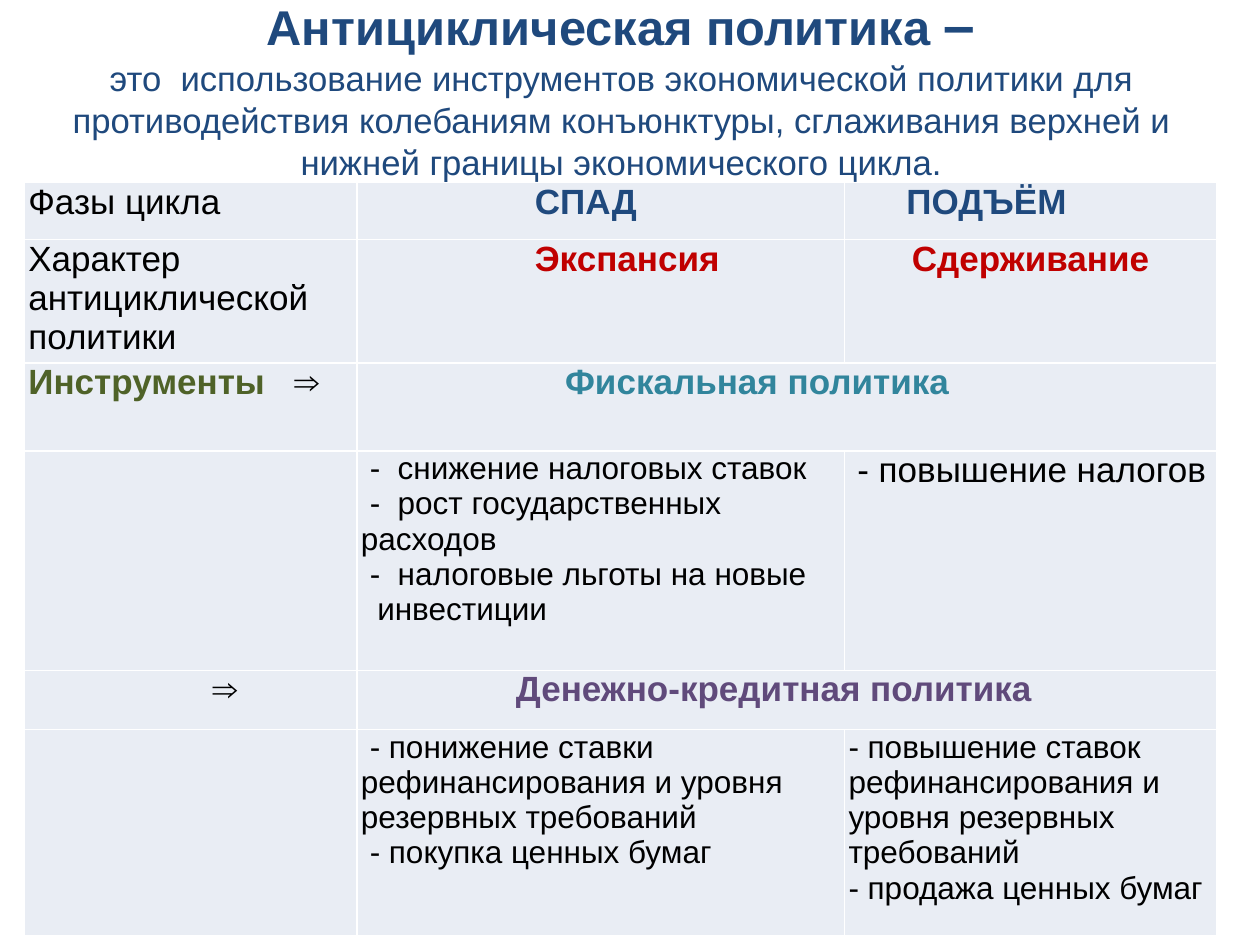
"""Build a slide on counter-cyclical economic policy."""
from dataclasses import dataclass

from lxml.etree import SubElement
from pptx import Presentation
from pptx.dml.color import RGBColor
from pptx.enum.text import MSO_ANCHOR, MSO_AUTO_SIZE, PP_ALIGN
from pptx.oxml.ns import qn
from pptx.util import Inches, Pt


@dataclass(frozen=True)
class Theme:
    """Hold the colours and type sizes of the slide."""
    font: str = "Arial"
    ink: str = "000000"
    navy: str = "1F497D"
    red: str = "C00000"
    olive: str = "4F6228"
    teal: str = "31859C"
    violet: str = "604A7B"
    panel: str = "E9EDF4"
    rule: str = "FFFFFF"
    heading: float = 27.9
    dash: float = 32.4
    definition: float = 19.8
    label: float = 20
    detail: float = 18


@dataclass(frozen=True)
class Line:
    """Describe one paragraph with its runs and its indents in grid units."""
    runs: tuple
    margin: float = 0
    first: float = 0
    centred: bool = False
    space_tracking: float = 0


class PolicySlide:
    """Draw titles and tables on a grid of 100 columns by 75 rows."""

    def __init__(self, deck, theme):
        """Add a title-only slide to the deck."""
        self.theme = theme
        self.slide = deck.slides.add_slide(deck.slide_layouts[5])
        self.unit = deck.slide_width / 100

    def length(self, units):
        """Turn grid units into a slide length."""
        return round(units * self.unit)

    def format_run(self, run, size, colour, bold):
        """Apply the type style to a run."""
        values = {"name": self.theme.font, "size": Pt(size), "bold": bold}
        for attribute, value in values.items():
            setattr(run.font, attribute, value)
        run.font.color.rgb = RGBColor.from_string(colour)

    def title(self, box, term, dash, definition):
        """Place the term, its dash and its definition in the title."""
        holder = self.slide.shapes.title
        for attribute, units in zip(("left", "top", "width", "height"), box):
            setattr(holder, attribute, self.length(units))
        frame = holder.text_frame
        values = {"word_wrap": True, "auto_size": MSO_AUTO_SIZE.NONE,
                  "vertical_anchor": MSO_ANCHOR.MIDDLE}
        for attribute, value in values.items():
            setattr(frame, attribute, value)
        paragraph = frame.paragraphs[0]
        paragraph.alignment = PP_ALIGN.CENTER
        paragraph.line_spacing = 1.0
        theme = self.theme
        parts = ((term, theme.heading, True), (dash, theme.dash, True),
                 (definition, theme.definition, False))
        for text, size, bold in parts:
            if text == definition:
                paragraph.add_line_break()
            run = paragraph.add_run()
            run.text = text
            self.format_run(run, size, theme.navy, bold)

    def table(self, left, top, columns, rows, content, merged_rows):
        """Place the table, merging the last two cells of the given rows."""
        frame = self.slide.shapes.add_table(
            len(rows), len(columns), self.length(left), self.length(top),
            self.length(sum(columns)), self.length(sum(rows)))
        grid = frame.table
        for column, width in zip(grid.columns, columns):
            column.width = self.length(width)
        for row, height in zip(grid.rows, rows):
            row.height = self.length(height)
        for row, entries in zip(grid.rows, content):
            for cell, lines in zip(row.cells, entries):
                self.cell(cell, lines)
        for row in merged_rows:
            grid.cell(row, 1).merge(grid.cell(row, 2))

    def cell(self, cell, lines):
        """Fill, border and write one table cell."""
        values = {"margin_left": Inches(0.03), "margin_right": Inches(0.03),
                  "margin_top": 0, "margin_bottom": 0}
        for attribute, value in values.items():
            setattr(cell, attribute, value)
        properties = cell._tc.get_or_add_tcPr()
        for side in ("a:lnL", "a:lnR", "a:lnT", "a:lnB"):
            border = SubElement(properties, qn(side), w=str(Pt(1)))
            fill = SubElement(border, qn("a:solidFill"))
            SubElement(fill, qn("a:srgbClr"), val=self.theme.rule)
        cell.fill.solid()
        cell.fill.fore_color.rgb = RGBColor.from_string(self.theme.panel)
        frame = cell.text_frame
        for index, line in enumerate(lines):
            paragraph = frame.add_paragraph() if index else frame.paragraphs[0]
            self.paragraph(paragraph, line)

    def paragraph(self, paragraph, line):
        """Write one paragraph of a table cell."""
        paragraph.alignment = PP_ALIGN.CENTER if line.centred else PP_ALIGN.LEFT
        properties = paragraph._p.get_or_add_pPr()
        for attribute, units in (("marL", line.margin), ("indent", line.first)):
            properties.set(attribute, str(self.length(units)))
        for text, size, colour, bold in line.runs:
            run = paragraph.add_run()
            run.text = text
            self.format_run(run, size, colour, bold)
            if text == " ":
                tracking = round(line.space_tracking * 100)
                run._r.get_or_add_rPr().set("spc", str(tracking))


def policy_rows(theme):
    """Return the lines of every table cell, row by row."""
    def plain(text):
        return text, theme.label, theme.ink, False

    def strong(text, colour):
        return text, theme.label, colour, True

    def label(text, **layout):
        return [Line((plain(text),), **layout)]

    def accent(text, colour, **layout):
        return [Line((strong(text, colour),), **layout)]

    def detail(text, **layout):
        return Line(((text, theme.detail, theme.ink, False),), **layout)

    return [
        [label("Фазы цикла"),
         accent("СПАД", theme.navy, margin=13.8),
         accent("ПОДЪЁМ", theme.navy, margin=4.6)],
        [label("Характер антициклической политики"),
         accent("Экспансия", theme.red, margin=13.8),
         accent("Сдерживание", theme.red, centred=True)],
        [[Line((strong("Инструменты", theme.olive), plain(" "), plain("⇒")),
               space_tracking=11)],
         accent("Фискальная политика", theme.teal, margin=16.2), []],
        [[],
         [detail("-  снижение налоговых ставок", first=0.7),
          detail("-  рост государственных расходов", first=0.7),
          detail("-  налоговые льготы на новые инвестиции", margin=1.3, first=-0.6)],
         label("- повышение налогов", first=0.7)],
        [label("⇒", margin=14.6),
         accent("Денежно-кредитная политика", theme.violet, margin=12.3), []],
        [[],
         [detail("- понижение ставки рефинансирования и уровня резервных требований",
                 first=0.7),
          detail("- покупка ценных бумаг", first=0.7)],
         [detail("- повышение ставок рефинансирования и уровня резервных требований"),
          detail("- продажа ценных бумаг")]],
    ]


def main():
    """Build and save the deck."""
    deck = Presentation()
    deck.slide_width, deck.slide_height = Inches(10), Inches(7.5)
    theme = Theme()
    policy = PolicySlide(deck, theme)
    policy.title(
        (4.3, 1.3, 90, 11), "Антициклическая политика ", "–",
        "это  использование инструментов экономической политики для "
        "противодействия колебаниям конъюнктуры, сглаживания верхней и "
        "нижней границы экономического цикла.")
    policy.table(1.95, 14.5, (26.4, 38.7, 29.5), (4.5, 9.8, 7, 17.4, 4.7, 16.4),
                 policy_rows(theme), merged_rows=(2, 4))
    deck.save("out.pptx")


if __name__ == "__main__":
    main()
